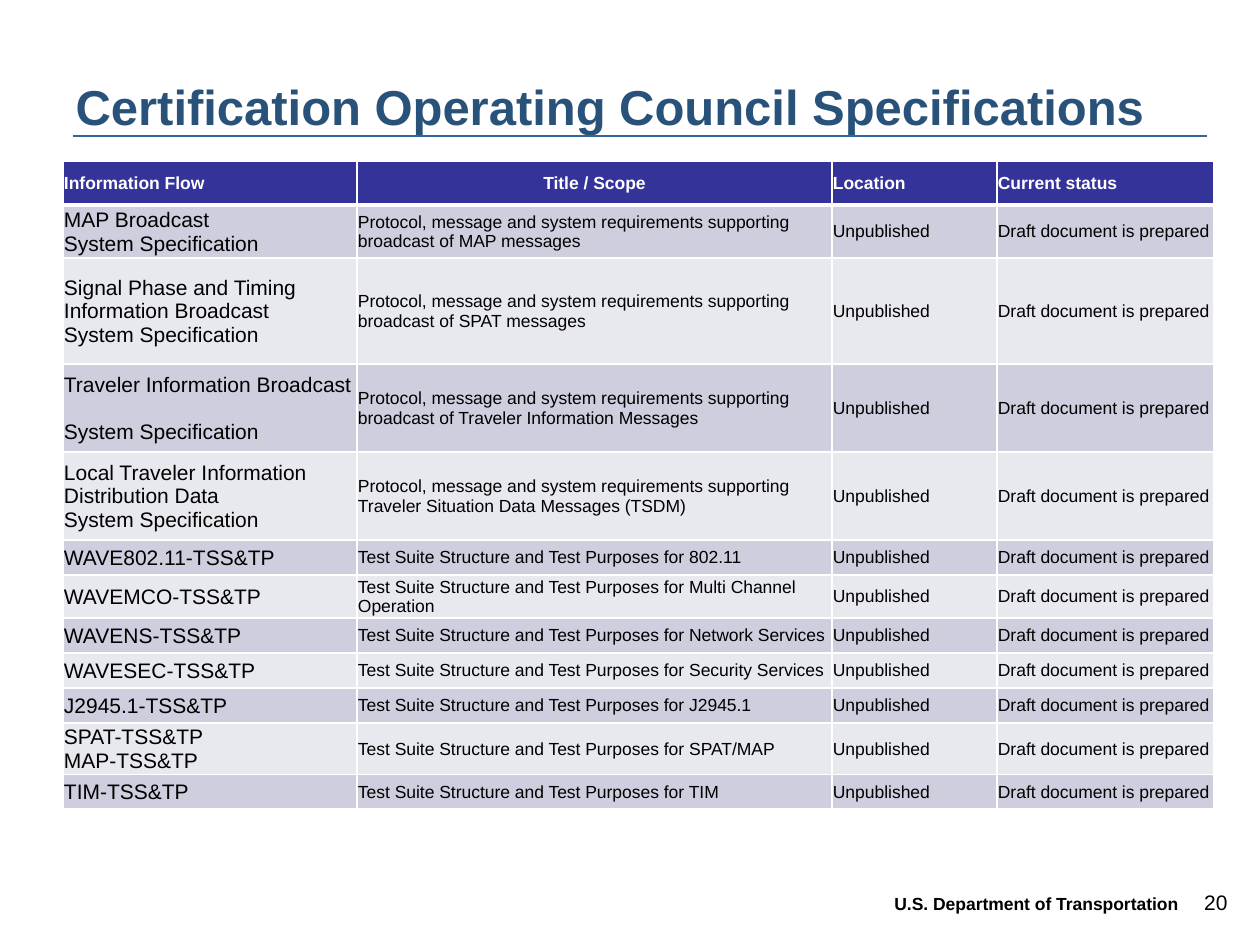
from copy import deepcopy

from pptx import Presentation
from pptx.dml.color import RGBColor
from pptx.enum.shapes import MSO_CONNECTOR as Connector
from pptx.enum.text import MSO_ANCHOR as Anchor, MSO_AUTO_SIZE as AutoSize, PP_ALIGN as Align
from pptx.oxml.ns import qn
from pptx.oxml.xmlchemy import OxmlElement
from pptx.util import Emu, Pt

PX_PER_INCH = 126
FONT = "Arial"
COLORS = {
    "title": "29527B",
    "rule": "336699",
    "header": "333399",
    "odd_row": "CECEDE",
    "even_row": "E8E8EF",
    "white": "FFFFFF",
    "black": "000000",
}
COLUMN_WIDTHS = [294, 475, 165, 217]
ROW_HEIGHTS = [44, 53, 106, 88, 88] + [35] * 7
HEADINGS = ["Information Flow", "Title / Scope", "Location", "Current status"]
PROTOCOL = "Protocol, message and system requirements supporting "
TESTS = "Test Suite Structure and Test Purposes for "
SPECIFICATIONS = [
    ("MAP Broadcast \nSystem Specification", PROTOCOL + "broadcast of MAP messages"),
    ("Signal Phase and Timing Information Broadcast \nSystem Specification",
     PROTOCOL + "broadcast of SPAT messages"),
    ("Traveler Information Broadcast \nSystem Specification",
     PROTOCOL + "broadcast of Traveler Information Messages"),
    ("Local Traveler Information Distribution Data \nSystem Specification",
     PROTOCOL + "Traveler Situation Data Messages (TSDM)"),
    ("WAVE802.11-TSS&TP", TESTS + "802.11"),
    ("WAVEMCO-TSS&TP", TESTS + "Multi Channel Operation"),
    ("WAVENS-TSS&TP", TESTS + "Network Services"),
    ("WAVESEC-TSS&TP", TESTS + "Security Services"),
    ("J2945.1-TSS&TP", TESTS + "J2945.1"),
    ("SPAT-TSS&TP\nMAP-TSS&TP", TESTS + "SPAT/MAP"),
    ("TIM-TSS&TP", TESTS + "TIM"),
]


def px(length):
    return Emu(round(length * 914400 / PX_PER_INCH))


def rgb(name):
    return RGBColor.from_string(COLORS[name])


def write_text(frame, text, size=10, color="black", bold=False, align=Align.LEFT, spacing=None):
    """Write one paragraph; a newline becomes a line break of the same size."""
    para = frame.paragraphs[0]
    para.alignment = align
    if spacing:
        para.line_spacing = spacing
    for index, line in enumerate(text.split("\n")):
        if index:
            para.add_line_break()
        span = para.add_run()
        span.text = line
        font = span.font
        font.name, font.size, font.bold = FONT, Pt(size), bold
        font.color.rgb = rgb(color)
    for line_break in para._p.findall(qn("a:br")):
        line_break.append(deepcopy(span._r.rPr))


def add_title(slide, text):
    title = slide.shapes.title
    title.left, title.top, title.width, title.height = map(px, (63, 53, 1134, 105))
    frame = title.text_frame
    frame.auto_size = AutoSize.NONE
    frame.vertical_anchor = Anchor.MIDDLE
    write_text(frame, text, size=28, color="title", bold=True)


def add_rule(slide, left, right, top):
    rule = slide.shapes.add_connector(Connector.STRAIGHT, px(left), px(top), px(right), px(top))
    rule.line.color.rgb = rgb("rule")
    rule.line.width = Pt(1.5)
    rule._element.spPr.append(OxmlElement("a:effectLst"))


def add_label(slide, bounds, text, **text_format):
    box = slide.shapes.add_textbox(*map(px, bounds))
    frame = box.text_frame
    frame.word_wrap = True
    frame.auto_size = AutoSize.SHAPE_TO_FIT_TEXT
    write_text(frame, text, **text_format)


def set_borders(cell, top=1, bottom=1):
    """Draw white borders, which must come before the fill in the cell properties."""
    widths = {"a:lnL": 1, "a:lnR": 1, "a:lnT": top, "a:lnB": bottom}
    for index, (tag, width) in enumerate(widths.items()):
        border = OxmlElement(tag)
        border.set("w", str(Pt(width)))
        fill = OxmlElement("a:solidFill")
        color = OxmlElement("a:srgbClr")
        color.set("val", COLORS["white"])
        fill.append(color)
        border.append(fill)
        cell._tc.get_or_add_tcPr().insert(index, border)


def fill_cell(cell, text, fill, borders, **text_format):
    cell.margin_left = cell.margin_top = cell.margin_right = px(1)
    cell.margin_bottom = 0
    cell.vertical_anchor = Anchor.MIDDLE
    cell.fill.solid()
    cell.fill.fore_color.rgb = rgb(fill)
    set_borders(cell, **borders)
    write_text(cell.text_frame, text, **text_format)


def add_specification_table(slide, left, top):
    table = slide.shapes.add_table(
        len(ROW_HEIGHTS), len(COLUMN_WIDTHS), px(left), px(top),
        px(sum(COLUMN_WIDTHS)), px(sum(ROW_HEIGHTS))).table
    table.horz_banding = False
    for column, width in zip(table.columns, COLUMN_WIDTHS):
        column.width = px(width)
    for row, height in zip(table.rows, ROW_HEIGHTS):
        row.height = px(height)

    for column, heading in enumerate(HEADINGS):
        fill_cell(table.cell(0, column), heading, "header", {"bottom": 3}, color="white",
                  bold=True, align=Align.CENTER if column == 1 else Align.LEFT)
    for row, (flow, scope) in enumerate(SPECIFICATIONS, start=1):
        fill = "odd_row" if row % 2 else "even_row"
        borders = {"top": 3 if row == 1 else 1}
        values = [flow, scope, "Unpublished", "Draft document is prepared"]
        for column, value in enumerate(values):
            fill_cell(table.cell(row, column), value, fill, borders,
                      size=10 if column else 12)


def main():
    deck = Presentation()
    deck.slide_width, deck.slide_height = px(1260), px(945)
    slide = deck.slides.add_slide(deck.slide_layouts[5])
    add_rule(slide, 73, 1207, 136)
    add_label(slide, (1187, 883, 53, 38), "20", size=12, align=Align.RIGHT)
    add_label(slide, (882, 892, 347, 29), "U.S. Department of Transportation",
              bold=True, spacing=Pt(9))
    add_title(slide, "Certification Operating Council Specifications")
    add_specification_table(slide, 63, 161)
    deck.save("out.pptx")


if __name__ == "__main__":
    main()
